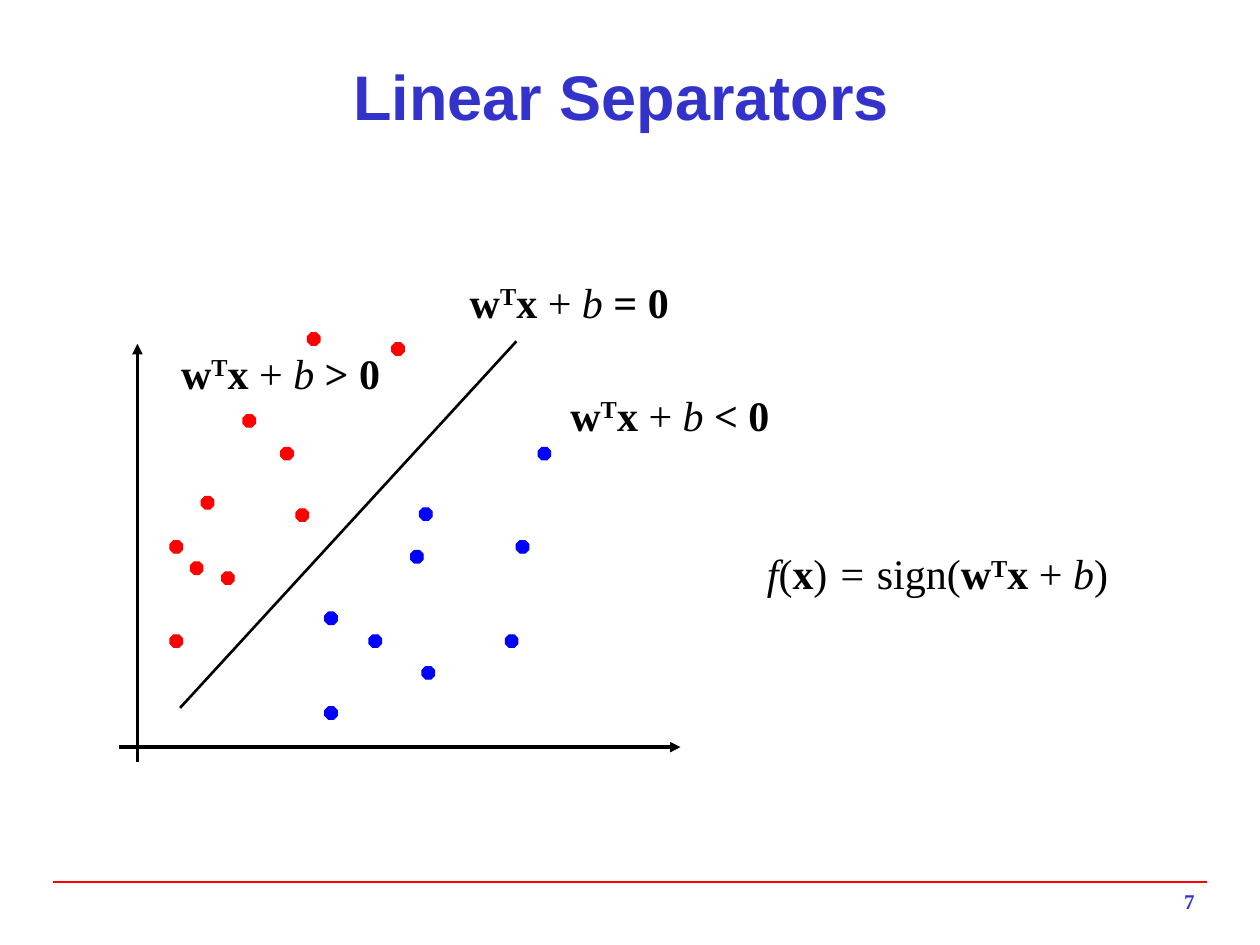
from lxml.etree import SubElement
from pptx import Presentation
from pptx.dml.color import RGBColor
from pptx.enum.shapes import MSO_CONNECTOR, MSO_SHAPE
from pptx.enum.text import MSO_ANCHOR, PP_ALIGN
from pptx.oxml.ns import qn
from pptx.util import Cm, Pt

COLORS = {"title": "3333CC", "ink": "000000", "positive": "FF0000",
          "negative": "0000FF", "rule": "FF0000"}
DOT_SIZE = 0.25


def color(name):
    return RGBColor.from_string(COLORS[name])


def add_text(left, top, width, height, runs, size, color_name, align=PP_ALIGN.LEFT):
    """Add one line of (text, style) runs; style letters: b bold, i italic, s superscript."""
    box = slide.shapes.add_textbox(Cm(left), Cm(top), Cm(width), Cm(height))
    box.text_frame.word_wrap = True
    para = box.text_frame.paragraphs[0]
    para.alignment = align
    for text, style in runs:
        span = para.add_run()
        span.text = text
        span.font.name = "Times New Roman"
        span.font.size = Pt(size)
        span.font.color.rgb = color(color_name)
        span.font.bold = "b" in style
        span.font.italic = "i" in style
        if "s" in style:
            span.font._element.set("baseline", "30000")


deck = Presentation()
deck.slide_width, deck.slide_height = Cm(25.4), Cm(19.05)
slide = deck.slides.add_slide(deck.slide_layouts[5])

# Title
title = slide.shapes.title
title.left, title.top, title.width, title.height = Cm(1.27), Cm(1.07), Cm(22.86), Cm(1.7)
title.text_frame.text = "Linear Separators "
title.text_frame.vertical_anchor = MSO_ANCHOR.MIDDLE
title_para = title.text_frame.paragraphs[0]
title_para.alignment = PP_ALIGN.CENTER
title_font = title_para.runs[0].font
title_font.name, title_font.size, title_font.bold = "Arial", Pt(36), True
title_font.color.rgb = color("title")

# Footer rule, axes and separating line: start, end, colour, weight, arrow
lines = [
    ((1.07, 17.78), (24.33, 17.78), "rule", 1, False),
    ((2.77, 15.37), (2.77, 6.93), "ink", 2, True),
    ((2.39, 15.06), (13.72, 15.06), "ink", 2, True),
    ((3.63, 14.27), (10.41, 6.88), "ink", 1.5, False),
]
for start, end, color_name, weight, has_arrow in lines:
    line = slide.shapes.add_connector(
        MSO_CONNECTOR.STRAIGHT, *(Cm(value) for value in start + end))
    line.line.color.rgb = color(color_name)
    line.line.width = Pt(weight)
    if has_arrow:
        SubElement(line.line._get_or_add_ln(), qn("a:tailEnd"), type="triangle")
    SubElement(line._element.spPr, qn("a:effectLst"))

# Data points of the two classes, by top left corner
points = {
    "positive": [(5.66, 9.02), (4.06, 10.01), (4.47, 11.53), (3.43, 12.8), (4.9, 8.36),
                 (3.43, 10.9), (3.84, 11.33), (5.97, 10.26), (6.2, 6.71), (7.9, 6.91)],
    "negative": [(8.46, 10.24), (7.44, 12.8), (10.19, 12.8), (6.55, 14.25), (8.28, 11.1),
                 (6.55, 12.34), (8.51, 13.44), (10.41, 10.9), (10.85, 9.02)],
}
for class_name, corners in points.items():
    for left, top in corners:
        dot = slide.shapes.add_shape(
            MSO_SHAPE.OCTAGON, Cm(left), Cm(top), Cm(DOT_SIZE), Cm(DOT_SIZE))
        dot.shadow.inherit = False
        dot.fill.solid()
        dot.fill.fore_color.rgb = color(class_name)
        dot.line.color.rgb = color(class_name)
        dot.line.width = Pt(0.75)

# Formulas
score = [("w", "b"), ("T", "bs"), ("x ", "b"), ("+ ", ""), ("b", "i")]
for left, top, relation in [(9.22, 5.44, " = 0"), (11.25, 7.72, " < 0"), (3.4, 6.88, " > 0")]:
    add_text(left, top, 7.42, 1.27, score + [(relation, "b")], 24, "ink")
decision = [("f", "i"), ("(", ""), ("x", "b"), (")", ""), (" = ", "i"), ("sign(", "")]
add_text(15.21, 10.92, 8.15, 1.27, decision + score + [(")", "")], 24, "ink")

# Page number
add_text(19.05, 17.78, 5.28, 0.84, [("7", "b")], 12, "title", PP_ALIGN.RIGHT)

deck.save("out.pptx")
